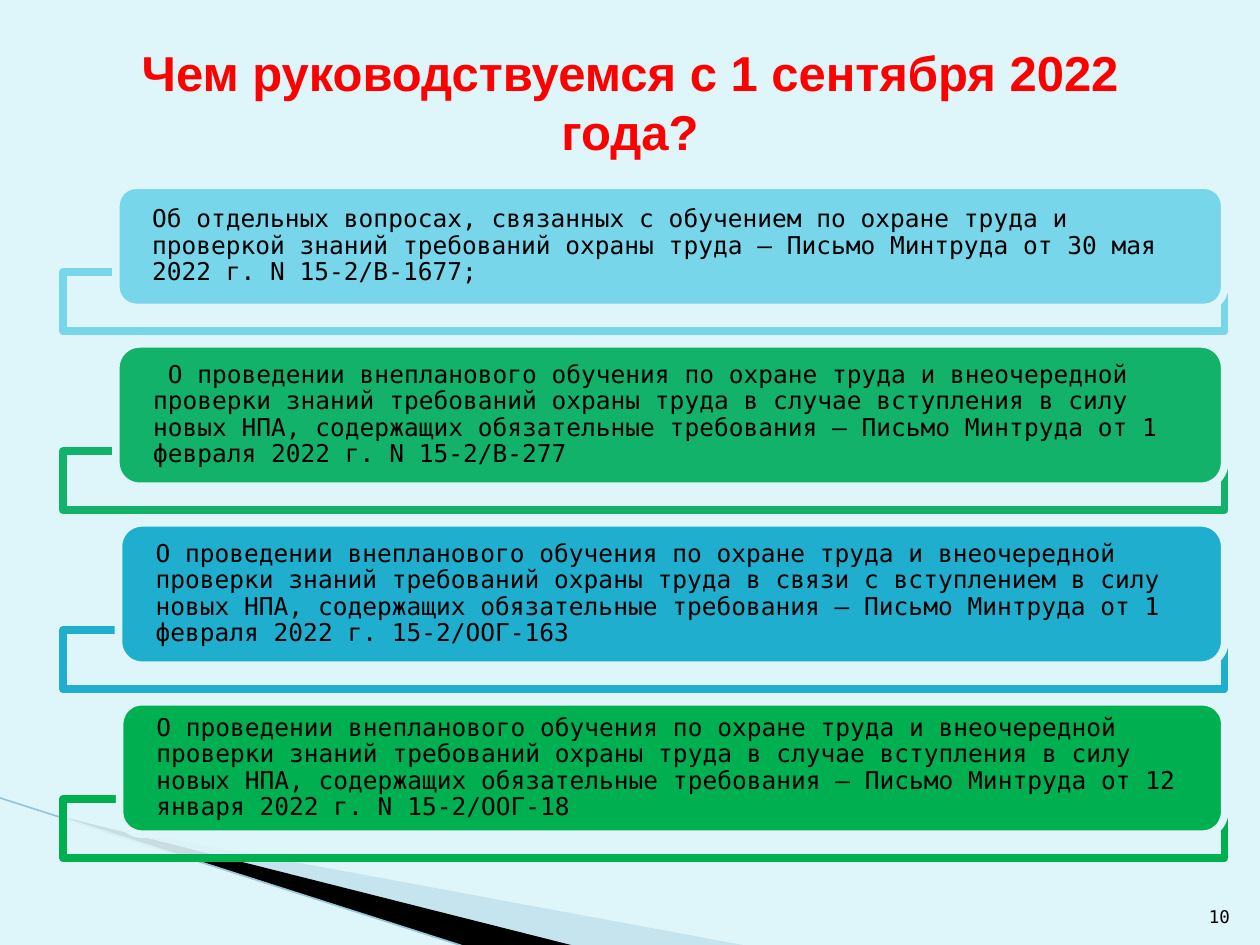
"""Build a slide listing the ministry letters on labour safety training."""
from lxml import etree
from pptx import Presentation
from pptx import util as u
from pptx.dml.color import RGBColor
from pptx.enum import shapes, text
from pptx.oxml.ns import qn

BACKGROUND = "DEF5FA"
MONO = "DejaVu Sans Mono"
TITLE = "Чем руководствуемся с 1 сентября 2022 года?"
PAGE_NUMBER = "10"
TRAINING = "О проведении внепланового обучения по охране труда и внеочередной проверки знаний требований охраны труда в "
RULES = " вступления в силу новых НПА, содержащих обязательные требования — Письмо Минтруда от "
LETTERS = [
    ("78D6EA", 0.92, 0.97, "Об отдельных вопросах, связанных с обучением по охране труда и проверкой "
     "знаний требований охраны труда – Письмо Минтруда от 30 мая 2022 г. N 15-2/В-1677;"),
    ("12B26A", 0.92, 1.13, " " + TRAINING + "случае" + RULES + "1 февраля 2022 г. N 15-2/В-277"),
    ("1FAECD", 0.94, 1.13, TRAINING + "связи с" + RULES.replace("вступления", "вступлением")
     + "1 февраля 2022 г. 15-2/ООГ-163"),
    ("00B050", 0.95, 1.05, TRAINING + "случае" + RULES + "12 января 2022 г. N 15-2/ООГ-18"),
]
WEDGES = [
    ("A0CBDC", 40, [(0.55, 6.51), (5.95, 7.51), (4.56, 7.51), (0.55, 6.5)]),
    ("000000", 100, [(0.53, 6.49), (4.57, 7.51), (3.72, 7.52), (0.54, 6.5)]),
]
FIRST_TOP, GAP, RIGHT = 1.47, 0.29, 9.72
FRAME_LEFT, FRAME_HEIGHT, FRAME_OVERLAP = 0.5, 0.47, 0.28
LINE_WIDTH = 4.33


def color(value):
    return RGBColor.from_string(value)


def paint(shape, fill, opacity=100, line=None):
    shape.shadow.inherit = False
    shape.fill.solid()
    shape.fill.fore_color.rgb = color(fill)
    if opacity < 100:
        fill_color = shape.fill._xPr.find(qn("a:solidFill"))[0]
        etree.SubElement(fill_color, qn("a:alpha"), val=str(opacity * 1000))
    if line:
        shape.line.color.rgb = color(line)
        shape.line.width = u.Pt(LINE_WIDTH)
    else:
        shape.line.fill.background()


def write(shape, words, frame_format, paragraph_format, font_format, font_color="000000"):
    frame = shape.text_frame
    frame.text = words
    paragraph = frame.paragraphs[0]
    targets = ((frame, {"word_wrap": True, **frame_format}),
               (paragraph, paragraph_format), (paragraph.runs[0].font, font_format))
    for target, values in targets:
        for name, value in values.items():
            setattr(target, name, value)
    paragraph.runs[0].font.color.rgb = color(font_color)


def add_box(slide, kind, left, top, width, height):
    return slide.shapes.add_shape(kind, *map(u.Inches, (left, top, width, height)))


def add_text(slide, left, top, width, height, *content):
    write(slide.shapes.add_textbox(*map(u.Inches, (left, top, width, height))), *content)


def add_decoration(slide):
    for fill, opacity, points in WEDGES:
        corners = [(x * 100, y * 100) for x, y in points]
        builder = slide.shapes.build_freeform(*corners[0], scale=u.Inches(0.01))
        builder.add_line_segments(corners[1:], close=True)
        paint(builder.convert_to_shape(), fill, opacity)
    edge = slide.shapes.add_connector(
        shapes.MSO_CONNECTOR.STRAIGHT, *map(u.Inches, (-0.01, 6.33, 3.71, 7.52)))
    edge.line.color.rgb = color("97C5D8")
    edge.line.width = u.Pt(0.95)
    etree.SubElement(edge._element.spPr, qn("a:effectLst"))


def add_letters(slide):
    frame_format = {"vertical_anchor": text.MSO_ANCHOR.MIDDLE,
                    "margin_left": u.Inches(0.24), "margin_right": u.Inches(0.24),
                    "margin_top": 0, "margin_bottom": 0}
    paragraph_format = {"alignment": text.PP_ALIGN.LEFT, "line_spacing": 0.9}
    top = FIRST_TOP
    for accent, left, height, words in LETTERS:
        bottom = top + height
        frame = add_box(slide, shapes.MSO_SHAPE.RECTANGLE, FRAME_LEFT, bottom - FRAME_OVERLAP,
                        RIGHT - FRAME_LEFT, FRAME_HEIGHT)
        paint(frame, BACKGROUND, 90, accent)
        card = add_box(slide, shapes.MSO_SHAPE.ROUNDED_RECTANGLE, left, top, RIGHT - left, height)
        paint(card, accent, line=BACKGROUND)
        write(card, words, frame_format, paragraph_format, {"name": MONO, "size": u.Pt(14)})
        top = bottom + GAP


def main():
    presentation = Presentation()
    presentation.slide_width, presentation.slide_height = u.Inches(10), u.Inches(7.5)
    slide = presentation.slides.add_slide(presentation.slide_layouts[6])
    slide.background.fill.solid()
    slide.background.fill.fore_color.rgb = color(BACKGROUND)
    add_decoration(slide)
    add_letters(slide)
    add_text(slide, 0.5, 0.3, 9, 1.01, TITLE, {"vertical_anchor": text.MSO_ANCHOR.MIDDLE},
             {"alignment": text.PP_ALIGN.CENTER},
             {"name": "Arial", "size": u.Pt(28), "bold": True}, "FF0000")
    add_text(slide, 9.46, 7.01, 0.4, 0.4, PAGE_NUMBER,
             {"vertical_anchor": text.MSO_ANCHOR.BOTTOM},
             {"alignment": text.PP_ALIGN.RIGHT}, {"name": MONO, "size": u.Pt(10)})
    presentation.save("out.pptx")


if __name__ == "__main__":
    main()
